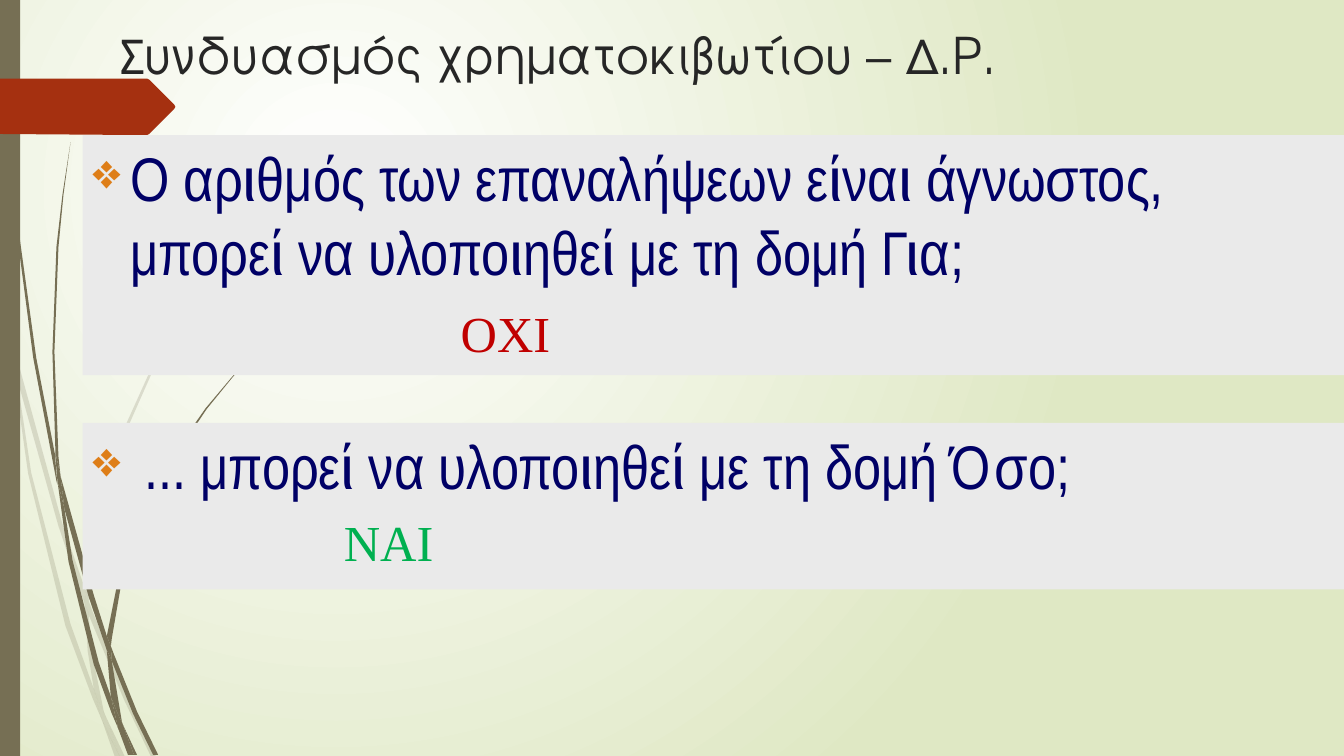
"""Build a slide on combining the box method with repetition structures."""
from lxml import etree
from pptx import Presentation
from pptx.dml.color import RGBColor
from pptx.enum import shapes, text
from pptx.oxml.ns import qn
from pptx.util import Pt

HUES = {
    "white": "FFFFFF", "pale": "DFE8C4", "olive": "766F54", "rust": "A53010",
    "ink": "262626", "panel": "EAEAEA", "navy": "000066", "mark": "DE7E18",
    "red": "C00000", "green": "00B050",
}
UNIT = Pt(0.72)
FAINT = [
    [(11, 350), (9, 322), (0, 282), (0, 299), (10, 344)],
    [(58, 522), (84, 599), (85, 586), (62, 520), (14, 345), (17, 376)],
    [(92, 607), (88, 596), (88, 610), (123, 694), (150, 751), (155, 751), (127, 692)],
    [(119, 751), (124, 751), (105, 711)],
    [(93, 683), (70, 619), (31, 469), (17, 376), (11, 350), (28, 470), (65, 621),
     (92, 693), (101, 714), (99, 707)],
    [(84, 599), (87, 646), (93, 683), (96, 692), (105, 711), (103, 706), (91, 646),
     (88, 610), (88, 608)],
    [(88, 584), (110, 462), (160, 349), (229, 245), (268, 198), (290, 175),
     (312, 154), (312, 153), (289, 175), (268, 197), (228, 244), (158, 348),
     (107, 461), (85, 584), (85, 586), (88, 596)],
    [(101, 714), (114, 751), (119, 751)],
    [(88, 608), (88, 610), (88, 596), (85, 586), (84, 599)],
    [(96, 692), (93, 683), (99, 707), (101, 714), (119, 751), (105, 711)],
]
DARK = [
    [(7, 110), (17, 233), (33, 355), (56, 477), (57, 481), (55, 457), (55, 453),
     (36, 355), (19, 232), (8, 109), (5, 48), (4, 0), (3, 0), (4, 48)],
    [(88, 592), (106, 645), (106, 633), (106, 631), (93, 590), (60, 472), (64, 505)],
    [(113, 649), (110, 641), (111, 656), (132, 708), (152, 749), (157, 749), (136, 706)],
    [(110, 691), (98, 657), (72, 556), (64, 505), (57, 477), (68, 557), (93, 659),
     (111, 708), (117, 722), (116, 717)],
    [(60, 472), (58, 453), (54, 349), (58, 245), (63, 193), (70, 141), (62, 193),
     (56, 245), (52, 349), (55, 449)],
    [(133, 749), (136, 749), (122, 719)],
    [(57, 477), (64, 505), (60, 472), (55, 449), (55, 453)],
    [(111, 633), (125, 552), (158, 476), (205, 406), (231, 374), (245, 359),
     (261, 344), (260, 344), (245, 358), (231, 373), (204, 405), (156, 474),
     (122, 551), (106, 631), (110, 641)],
    [(117, 722), (127, 749), (131, 749)],
    [(106, 645), (110, 691), (116, 706), (122, 719), (121, 716), (111, 656), (109, 651)],
    [(106, 645), (109, 651), (111, 656), (110, 641), (106, 631), (106, 633)],
    [(116, 706), (110, 691), (116, 717), (117, 722), (130, 749), (133, 749), (122, 719)],
]
ARROW = [(173, 108), (148, 133), (146, 134), (136, 134), (0, 133), (0, 78),
         (146, 78), (148, 79), (173, 104), (174, 106)]


def tint(name):
    """Return the named colour."""
    return RGBColor.from_string(HUES[name])


def paint(shape, hue, alpha=None):
    """Fill a shape flatly, without line or shadow."""
    shape.shadow.inherit = False
    shape.line.fill.background()
    shape.fill.solid()
    shape.fill.fore_color.rgb = tint(hue)
    if alpha:
        clr = shape.element.spPr.find(".//" + qn("a:srgbClr"))
        etree.SubElement(clr, qn("a:alpha"), val=str(alpha * 1000))


def wash(slide):
    """Give the slide its radial background."""
    fill = slide.background.fill
    fill.gradient()
    for stop, hue in zip(fill.gradient_stops, ("white", "pale")):
        stop.color.rgb = tint(hue)
    lin = slide.element.find(".//" + qn("a:lin"))
    ring = etree.Element(qn("a:path"), path="circle")
    etree.SubElement(ring, qn("a:fillToRect"), l="50000", t="50000",
                     r="100000", b="100000")
    lin.getparent().replace(lin, ring)


def outline(slide, dots, hue, alpha=None):
    """Draw a closed outline through the dots."""
    pen = slide.shapes.build_freeform(*dots[0], scale=UNIT)
    pen.add_line_segments(dots[1:], close=True)
    paint(pen.convert_to_shape(), hue, alpha)


def block(slide, box, hue):
    """Add a plain rectangle."""
    shape = slide.shapes.add_shape(shapes.MSO_SHAPE.RECTANGLE, *map(Pt, box))
    paint(shape, hue)
    return shape


def write(frame, words, size, face, hue):
    """Set one left-aligned paragraph and return it."""
    frame.word_wrap = True
    para = frame.paragraphs[0]
    para.text = words
    para.alignment = text.PP_ALIGN.LEFT
    font = para.font
    font.size, font.name, font.color.rgb = Pt(size), face, tint(hue)
    return para


def label(slide, box, words, face, hue):
    """Add a text box and return its frame."""
    frame = slide.shapes.add_textbox(*map(Pt, box)).text_frame
    write(frame, words, 36, face, hue)
    return frame


def panel(slide, top, height, words):
    """Add a grey panel with a bulleted question."""
    frame = block(slide, (59, top, 901, height), "panel").text_frame
    frame.vertical_anchor = text.MSO_ANCHOR.TOP
    para = write(frame, words, 44, "Arial Narrow", "navy")
    para.space_before = Pt(3.6)
    props = para._p.get_or_add_pPr()
    props.set("marL", str(Pt(27)))
    props.set("indent", str(Pt(-27)))
    color = etree.Element(qn("a:buClr"))
    etree.SubElement(color, qn("a:srgbClr"), val=HUES["mark"])
    size = etree.Element(qn("a:buSzPct"), val="80000")
    char = etree.Element(qn("a:buChar"), char="❖")
    last = props.find(qn("a:defRPr"))
    for node in (color, size, char):
        last.addprevious(node)


def answer(slide, left, top, words, hue):
    """Add a coloured answer."""
    frame = label(slide, (left, top, 199, 51), words, "Times New Roman", hue)
    frame.auto_size = text.MSO_AUTO_SIZE.SHAPE_TO_FIT_TEXT


def main():
    """Build and save the slide."""
    deck = Presentation()
    deck.slide_width, deck.slide_height = Pt(960), Pt(540)
    slide = deck.slides.add_slide(deck.slide_layouts[6])
    wash(slide)
    for dots in FAINT:
        outline(slide, dots, "olive", 20)
    for dots in DARK:
        outline(slide, dots, "olive")
    block(slide, (0, 0, 14.4, 540), "olive")
    outline(slide, ARROW, "rust")
    title = label(slide, (80, 12, 847, 54), "Συνδυασμός χρηματοκιβωτίου – Δ.Ρ.",
                  "TeX Gyre Adventor", "ink")
    title.vertical_anchor = text.MSO_ANCHOR.MIDDLE
    panel(slide, 96.5, 171.5, "Ο αριθμός των επαναλήψεων είναι άγνωστος, "
          "μπορεί να υλοποιηθεί με τη δομή Για;")
    panel(slide, 302, 119, " ... μπορεί να υλοποιηθεί με τη δομή Όσο;")
    answer(slide, 322, 212.5, "ΟΧΙ", "red")
    answer(slide, 238.5, 361.5, "ΝΑΙ", "green")
    deck.save("out.pptx")


if __name__ == "__main__":
    main()
